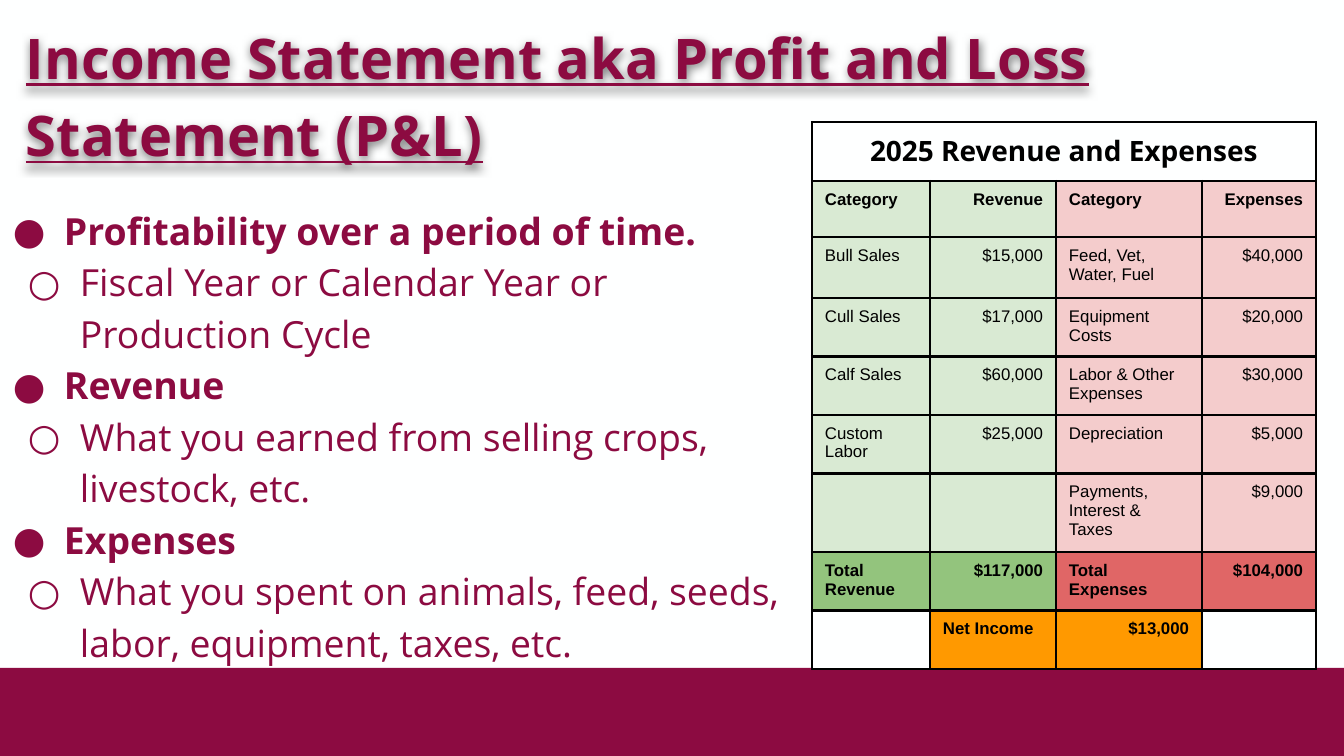
"""Build the income statement slide with its table of revenue and expenses."""

from typing import NamedTuple

from lxml import etree
from pptx import Presentation
from pptx.dml.color import RGBColor
from pptx.enum.shapes import MSO_SHAPE
from pptx.enum.text import MSO_ANCHOR, PP_ALIGN
from pptx.oxml import parse_xml
from pptx.oxml.ns import qn
from pptx.util import Emu, Pt

RECT = MSO_SHAPE.RECTANGLE
TOP, MIDDLE = MSO_ANCHOR.TOP, MSO_ANCHOR.MIDDLE
LEFT, CENTER, RIGHT = PP_ALIGN.LEFT, PP_ALIGN.CENTER, PP_ALIGN.RIGHT
WIDE, HIGH = 1344, 756
SCALE = 9144000 / WIDE
SPACE = "http://schemas.openxmlformats.org/drawingml/2006/main"
SERIF, SANS = "Open Sans", "Arial"
HEX = {
    "page": "FEFFFF", "wine": "8C0B41", "black": "000000",
    "mint": "D9EAD3", "pink": "F4CCCC", "green": "93C47D",
    "red": "E06666", "gold": "FF9900",
}


class Box(NamedTuple):
    left: int
    top: int
    width: int
    height: int


class Style(NamedTuple):
    font: str
    size: int
    color: str
    bold: bool = False
    line: bool = False


class Point(NamedTuple):
    head: str
    note: str


class Row(NamedTuple):
    height: int
    texts: tuple
    fills: tuple
    bold: bool = False


PALE = ("mint", "mint", "pink", "pink")
DEEP = ("green", "green", "red", "red")
NET = ("page", "gold", "gold", "page")
COLS = (118, 126, 146, 114)
ROWS = (
    Row(59, ("2025 Revenue and Expenses", "", "", ""), ("page",) * 4, True),
    Row(56, ("Category", "Revenue", "Category", "Expenses"), PALE, True),
    Row(61, ("Bull Sales", "$15,000", "Feed, Vet, Water, Fuel", "$40,000"), PALE),
    Row(57, ("Cull Sales", "$17,000", "Equipment Costs", "$20,000"), PALE),
    Row(58, ("Calf Sales", "$60,000", "Labor & Other Expenses", "$30,000"), PALE),
    Row(58, ("Custom Labor", "$25,000", "Depreciation", "$5,000"), PALE),
    Row(77, ("", "", "Payments, Interest & Taxes", "$9,000"), PALE),
    Row(58, ("Total Revenue", "$117,000", "Total Expenses", "$104,000"), DEEP, True),
    Row(57, ("", "Net Income", "$13,000", ""), NET, True),
)
POINTS = (
    Point("Profitability over a period of time.",
          "Fiscal Year or Calendar Year or Production Cycle"),
    Point("Revenue", "What you earned from selling crops, livestock, etc."),
    Point("Expenses",
          "What you spent on animals, feed, seeds, labor, equipment, taxes, etc."),
)


def px(size: int) -> Emu:
    """Turn pixels into EMU."""
    return Emu(round(size * SCALE))


def rgb(name: str) -> RGBColor:
    """Look up a named colour."""
    return RGBColor.from_string(HEX[name])


def place(box: Box) -> list:
    """Turn a box into EMU lengths."""
    return [px(side) for side in box]


def format_runs(para, style: Style) -> None:
    """Apply a style to every run of a paragraph."""
    for run in para.runs:
        font = run.font
        font.name, font.size = style.font, Pt(style.size)
        font.bold, font.underline = style.bold, style.line
        font.color.rgb = rgb(style.color)


def add_band(slide, box: Box, color: str) -> None:
    """Draw a plain filled band."""
    band = slide.shapes.add_shape(RECT, *place(box))
    band.shadow.inherit = False
    band.fill.solid()
    band.fill.fore_color.rgb = rgb(color)
    band.line.fill.background()


def add_text(slide, box: Box, pad: int, anchor: MSO_ANCHOR):
    """Add a wrapping text box with 13 px side margins."""
    shape = slide.shapes.add_textbox(*place(box))
    frame = shape.text_frame
    frame.word_wrap, frame.vertical_anchor = True, anchor
    frame.margin_left = frame.margin_right = px(13)
    frame.margin_top = frame.margin_bottom = px(pad)
    return shape


def add_title(slide, box: Box, text: str) -> None:
    """Add the underlined heading with its soft shadow."""
    shape = add_text(slide, box, 13, TOP)
    shape.text_frame.text = text
    para = shape.text_frame.paragraphs[0]
    para.line_spacing = 1.15
    para._p.get_or_add_pPr().set("marL", str(px(13)))
    format_runs(para, Style(SERIF, 30, "wine", True, True))
    shape._element.spPr.append(parse_xml(
        f'<a:effectLst xmlns:a="{SPACE}"><a:outerShdw blurRad="57150" '
        f'dist="19050" dir="5400000" algn="bl" rotWithShape="0">'
        f'<a:srgbClr val="{HEX["black"]}"><a:alpha val="50000"/></a:srgbClr>'
        f'</a:outerShdw></a:effectLst>'))


def add_bullet(para, mark: str, margin: int) -> None:
    """Give a paragraph a hanging bullet."""
    props = para._p.get_or_add_pPr()
    props.set("marL", str(px(margin)))
    props.set("indent", str(px(-52)))
    color = etree.SubElement(props, qn("a:buClr"))
    etree.SubElement(color, qn("a:srgbClr"), val=HEX["wine"])
    etree.SubElement(props, qn("a:buFont"), typeface=SERIF)
    etree.SubElement(props, qn("a:buChar"), char=mark)


def add_points(slide, box: Box, points: tuple) -> None:
    """Add the bold points, each with its note below."""
    frame = add_text(slide, box, 7, MIDDLE).text_frame
    frame.text = "\n".join(text for point in points for text in point)
    for i, para in enumerate(frame.paragraphs):
        head = i % 2 == 0
        para.level = 0 if head else 1
        para.line_spacing = 1.15
        add_bullet(para, "●" if head else "○", 51 if head else 67)
        format_runs(para, Style(SERIF, 20, "wine", head))


def add_edges(cell) -> None:
    """Draw the four black borders of a cell."""
    props = cell._tc.get_or_add_tcPr()
    for side in "LRTB":
        edge = etree.SubElement(props, qn(f"a:ln{side}"), w=str(Pt(1.5)))
        fill = etree.SubElement(edge, qn("a:solidFill"))
        etree.SubElement(fill, qn("a:srgbClr"), val=HEX["black"])


def fill_cell(cell, text: str, fill: str, align: PP_ALIGN, style: Style) -> None:
    """Set the text, margins, borders and fill of a cell."""
    cell.margin_left = cell.margin_right = px(13)
    cell.margin_top = cell.margin_bottom = px(9)
    add_edges(cell)
    cell.fill.solid()
    cell.fill.fore_color.rgb = rgb(fill)
    if text:
        cell.text_frame.text = text
        para = cell.text_frame.paragraphs[0]
        para.alignment = align
        format_runs(para, style)


def add_grid(slide, left: int, top: int, cols: tuple, rows: tuple) -> None:
    """Add the table, with its heading across all columns."""
    box = Box(left, top, sum(cols), sum(row.height for row in rows))
    table = slide.shapes.add_table(len(rows), len(cols), *place(box)).table
    table.first_row = table.horz_banding = False
    for col, width in zip(table.columns, cols):
        col.width = px(width)
    for i, row in enumerate(rows):
        table.rows[i].height = px(row.height)
        for j, (text, fill) in enumerate(zip(row.texts, row.fills)):
            align = RIGHT if text.startswith("$") or (i == 1 and j % 2) else LEFT
            style = Style(SANS, 9, "black", row.bold)
            if i == 0:
                align, style = CENTER, Style(SERIF, 15, "black", True)
            fill_cell(table.cell(i, j), text, fill, align, style)
    table.cell(0, 0).merge(table.cell(0, len(cols) - 1))


def main() -> None:
    """Build and save the slide."""
    deck = Presentation()
    deck.slide_width, deck.slide_height = px(WIDE), px(HIGH)
    slide = deck.slides.add_slide(deck.slide_layouts[6])
    slide.background.fill.solid()
    slide.background.fill.fore_color.rgb = rgb("page")
    add_band(slide, Box(0, 668, WIDE, 88), "wine")
    add_points(slide, Box(0, 179, 806, 508), POINTS)
    add_title(slide, Box(0, 0, WIDE, 101),
              "Income Statement aka Profit and Loss Statement (P&L)")
    add_grid(slide, 812, 122, COLS, ROWS)
    deck.save("out.pptx")


if __name__ == "__main__":
    main()
